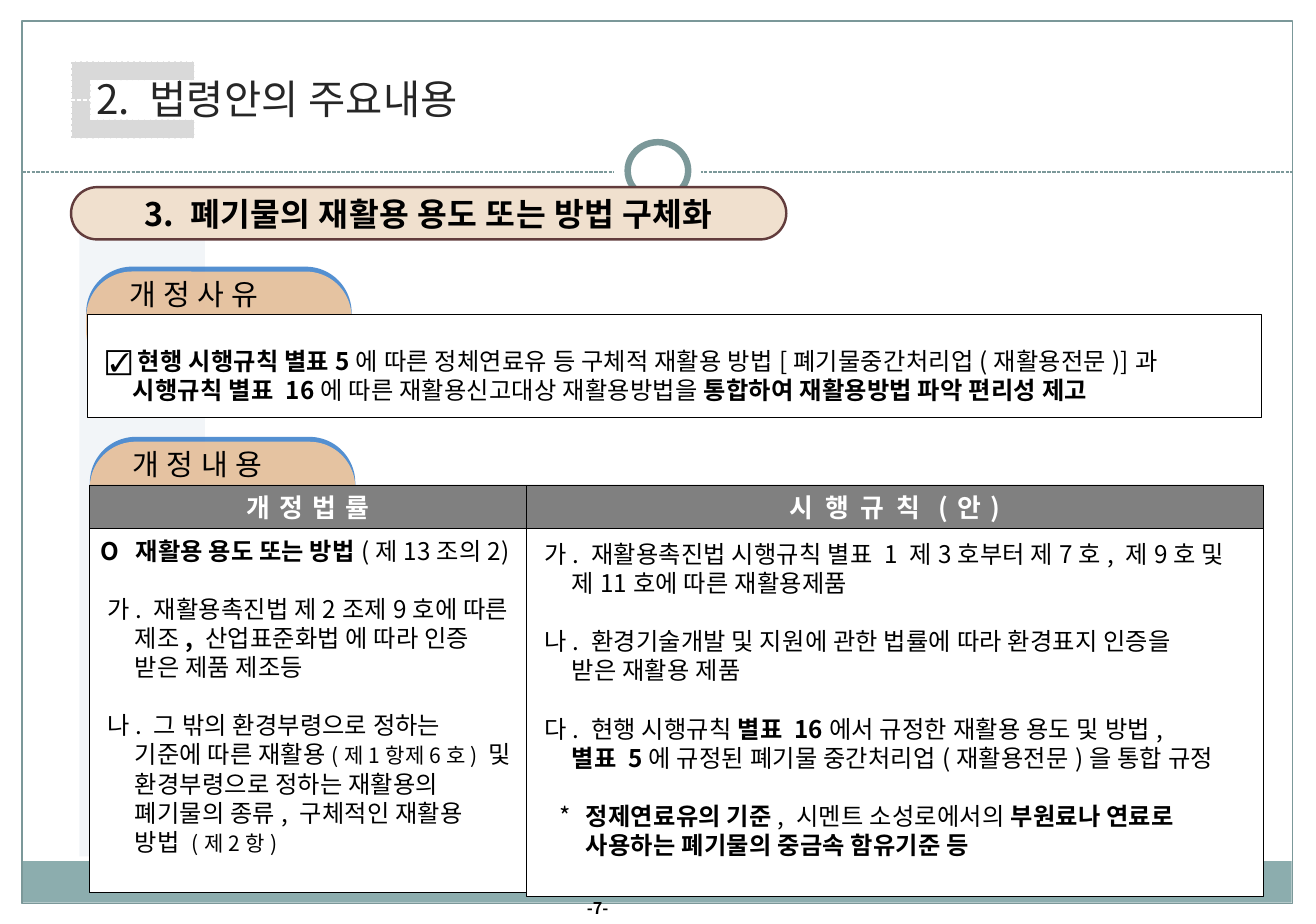
from dataclasses import dataclass

from lxml import etree
from pptx import Presentation
from pptx import util as u
from pptx.dml.color import RGBColor
from pptx.enum import dml, shapes, text
from pptx.oxml.ns import qn

FONT = "Noto Sans CJK KR"
CM_PER_INCH = 2.54
COLORS = {
    "white": "FFFFFF", "black": "000000", "title": "262626", "teal": "7B9899",
    "divider": "7C999A", "footer": "8CADAE", "sidebar": "F2F5F8", "bracket": "D9D9D9",
    "banner": "F0E0CE", "maroon": "623C3C", "tab": "FFCC99", "tab_edge": "377DC9",
    "header": "808080",
}
KINDS = shapes.MSO_SHAPE
LEFT, CENTER = text.PP_ALIGN.LEFT, text.PP_ALIGN.CENTER
TOP, MIDDLE = text.MSO_ANCHOR.TOP, text.MSO_ANCHOR.MIDDLE


@dataclass
class Box:
    """Place in centimetres, with fill and outline."""
    left: float
    top: float
    width: float
    height: float
    fill: str | None = None
    line: str | None = None
    weight: float = 0.25
    kind: int = KINDS.RECTANGLE
    radius: float | None = None


@dataclass
class Run:
    words: str
    bold: bool = False
    size: float | None = None


@dataclass
class Para:
    """Runs with the first-line and continuation indents in centimetres."""
    runs: list[Run]
    first: float = 0
    hang: float = 0
    gap: float = 0


@dataclass
class Style:
    size: float
    color: str = "black"
    align: int = LEFT
    anchor: int = MIDDLE
    inset: tuple[float, float] = (0.25, 0)
    leading: float | None = None
    tracking: float = 0


prs = Presentation()
prs.slide_width, prs.slide_height = (u.Cm(side * CM_PER_INCH) for side in (11.3, 7.93))
slide = prs.slides.add_slide(prs.slide_layouts[6])


def rgb(name: str) -> RGBColor:
    return RGBColor.from_string(COLORS[name])


def cm(*values: float) -> list[int]:
    return [u.Cm(v) for v in values]


def paint(shape, fill: str | None, line: str | None, weight: float) -> None:
    shape.shadow.inherit = False
    if fill:
        shape.fill.solid()
        shape.fill.fore_color.rgb = rgb(fill)
    else:
        shape.fill.background()
    if line:
        shape.line.color.rgb = rgb(line)
        shape.line.width = u.Pt(weight)
    else:
        shape.line.fill.background()


def draw(box: Box):
    shape = slide.shapes.add_shape(box.kind, *cm(box.left, box.top, box.width, box.height))
    paint(shape, box.fill, box.line, box.weight)
    if box.radius is not None:
        shape.adjustments[0] = box.radius
    return shape


def label(box: Box):
    return slide.shapes.add_textbox(*cm(box.left, box.top, box.width, box.height))


def write(shape, paras: list[Para], style: Style) -> None:
    frame = shape.text_frame
    side, above = cm(*style.inset)
    settings = {"word_wrap": True, "vertical_anchor": style.anchor, "margin_left": side,
                "margin_right": 0 if style.align == LEFT else side,
                "margin_top": above, "margin_bottom": 0}
    for name, value in settings.items():
        setattr(frame, name, value)
    for index, para in enumerate(paras):
        line = frame.add_paragraph() if index else frame.paragraphs[0]
        layout = {"alignment": style.align, "space_before": u.Pt(para.gap)}
        if style.leading:
            layout["line_spacing"] = u.Pt(style.leading)
        for name, value in layout.items():
            setattr(line, name, value)
        if para.hang:
            props = line._p.get_or_add_pPr()
            props.set("marL", str(u.Cm(para.hang)))
            props.set("indent", str(u.Cm(para.first) - u.Cm(para.hang)))
        for run in para.runs:
            for part, words in enumerate(run.words.split("\n")):
                if part:
                    line.add_line_break()
                if words:
                    piece = line.add_run()
                    piece.text = words
                    formats = {"name": FONT, "size": u.Pt(run.size or style.size), "bold": run.bold}
                    for name, value in formats.items():
                        setattr(piece.font, name, value)
                    piece.font.color.rgb = rgb(style.color)
                    props = piece._r.get_or_add_rPr()
                    etree.SubElement(props, qn("a:ea"), typeface=FONT)
                    if style.tracking:
                        props.set("spc", str(round(style.tracking * 100)))


def tab(left: float, top: float, words: str) -> None:
    """Translucent rounded tab with a solid edge above it, and its label."""
    shape = draw(Box(left, top, 5.79, 2.31, "tab", kind=KINDS.ROUNDED_RECTANGLE, radius=0.434))
    color = shape._element.spPr.find(qn("a:solidFill"))[0]
    etree.SubElement(color, qn("a:alpha"), val="85000")
    effects = shape._element.spPr.find(qn("a:effectLst"))
    edge = etree.SubElement(effects, qn("a:outerShdw"), dist=str(u.Pt(3)), dir="16200000",
                            algn="ctr", rotWithShape="0")
    etree.SubElement(edge, qn("a:srgbClr"), val=COLORS["tab_edge"])
    write(label(Box(left - 0.2, top - 0.06, 5.79, 1.09)), [Para([Run(words)])],
          Style(18, inset=(1.14, 0), tracking=0.25))


# Frame, footer band, divider and ring
draw(Box(0.46, 18.77, 27.71, 0.91, "footer"))
draw(Box(0.48, 0.46, 27.71, 19.23, None, "teal", 0.75))
divider = slide.shapes.add_connector(shapes.MSO_CONNECTOR.STRAIGHT, *cm(0.48, 3.75, 28.19, 3.75))
divider.line.color.rgb = rgb("divider")
divider.line.width = u.Pt(0.75)
divider.line.dash_style = dml.MSO_LINE.SQUARE_DOT
etree.SubElement(divider._element.spPr, qn("a:effectLst"))
draw(Box(13.39, 2.82, 1.9, 1.78, "white", kind=KINDS.OVAL))
draw(Box(13.69, 3.1, 1.32, 1.24, "white", "teal", 4, KINDS.OVAL))
draw(Box(1.73, 4.19, 2.74, 14.48, "sidebar"))

# Section banner
banner = draw(Box(1.55, 4.08, 15.6, 1.14, "banner", "maroon", 1.5, KINDS.ROUNDED_RECTANGLE, 0.5))
write(banner, [Para([Run("3. 폐기물의 재활용 용도 또는 방법 구체화", True)])],
      Style(20, align=CENTER, tracking=0.28))

# Title with its bracket, whose lower half mirrors the upper one
MID = 2.18
title = label(Box(1.85, 1.47, 9.14, 1.35))
write(title, [Para([Run("2. 법령안의 주요내용")])], Style(25, "title", tracking=0.2))
for side in (1, -1):
    notch, edge = MID + side * 0.43, MID + side * 0.84
    corners = [(1.98, MID), (1.98, notch), (4.24, notch), (4.24, edge), (1.55, edge)]
    outline = slide.shapes.build_freeform(*cm(1.55, MID), scale=1.0)
    outline.add_line_segments([tuple(cm(*corner)) for corner in corners])
    bracket = outline.convert_to_shape()
    paint(bracket, "bracket", "white", 0.9)
    bracket.line.dash_style = dml.MSO_LINE.SQUARE_DOT

# Page number
write(label(Box(12.55, 19.46, 1.04, 0.69)), [Para([Run("-7-", True)])], Style(10))

# Section tabs
tab(1.96, 9.63, "개 정 내 용")
tab(1.88, 5.92, "개 정 사 유")

# Reason for the amendment
reason = draw(Box(1.91, 6.86, 25.6, 2.24, "white", "black"))
write(reason, [Para([
    Run("☑ ", size=16), Run("현행 시행규칙 별표5", True),
    Run("에 따른 정체연료유 등 구체적 재활용 방법[폐기물중간처리업(재활용전문)]과\n"),
    Run("시행규칙 별표 16", True), Run("에 따른 재활용신고대상 재활용방법을 "),
    Run("통합하여 재활용방법 파악 편리성 제고", True),
], hang=0.59)], Style(15, anchor=TOP, inset=(0.4, 0.69), leading=18, tracking=0.15))

# Amended act
ITEM = {"first": 0.14, "hang": 0.74, "gap": 18}
act = draw(Box(1.95, 11.52, 9.53, 7.93, "white", "black"))
write(act, [
    Para([Run("O\t재활용 용도 또는 방법", True), Run("(제13조의2)")], hang=0.76),
    Para([Run("가. 재활용촉진법 제2조제9호에 따른\n제조"), Run(", ", True),
          Run("산업표준화법 에 따라 인증\n받은 제품 제조등")], **ITEM),
    Para([Run("나. 그 밖의 환경부령으로 정하는\n기준에 따른 재활용"), Run("(제1항제6호) ", size=13),
          Run("및\n환경부령으로 정하는 재활용의\n폐기물의 종류, 구체적인 재활용\n방법"),
          Run(" ", size=16), Run("(제2항)", size=13)], **ITEM),
], Style(15, anchor=TOP, inset=(0.25, 0.16), leading=18, tracking=0.12))

# Enforcement rule
rule = draw(Box(11.48, 10.92, 16.08, 8.61, "white", "black"))
write(rule, [
    Para([Run("가. 재활용촉진법 시행규칙 별표 1 제3호부터 제7호, 제9호 및\n제11호에 따른 재활용제품")],
         first=0.14, hang=0.74),
    Para([Run("나. 환경기술개발 및 지원에 관한 법률에 따라 환경표지 인증을\n받은 재활용 제품")], **ITEM),
    Para([Run("다. 현행 시행규칙 "), Run("별표 16", True), Run("에서 규정한 재활용 용도 및 방법,\n"),
          Run("별표 5", True), Run("에 규정된 폐기물 중간처리업(재활용전문)을 통합 규정")], **ITEM),
    Para([Run("*\t"), Run("정제연료유의 기준", True), Run(", 시멘트 소성로에서의 "),
          Run("부원료나 연료로\n사용하는 폐기물의 중금속 함유기준 등", True)],
         first=0.48, hang=1.05, gap=18),
], Style(15, anchor=TOP, inset=(0.25, 0.83), leading=18, tracking=0.15))

# Column headings
for left, width, words, tracking in ((11.48, 16.08, "시 행 규 칙 (안)", 1.9),
                                     (1.95, 9.53, "개 정 법 률", 1)):
    heading = draw(Box(left, 10.57, width, 0.95, "header", "black"))
    write(heading, [Para([Run(words, True)])],
          Style(16, "white", CENTER, tracking=tracking))

prs.save("out.pptx")
